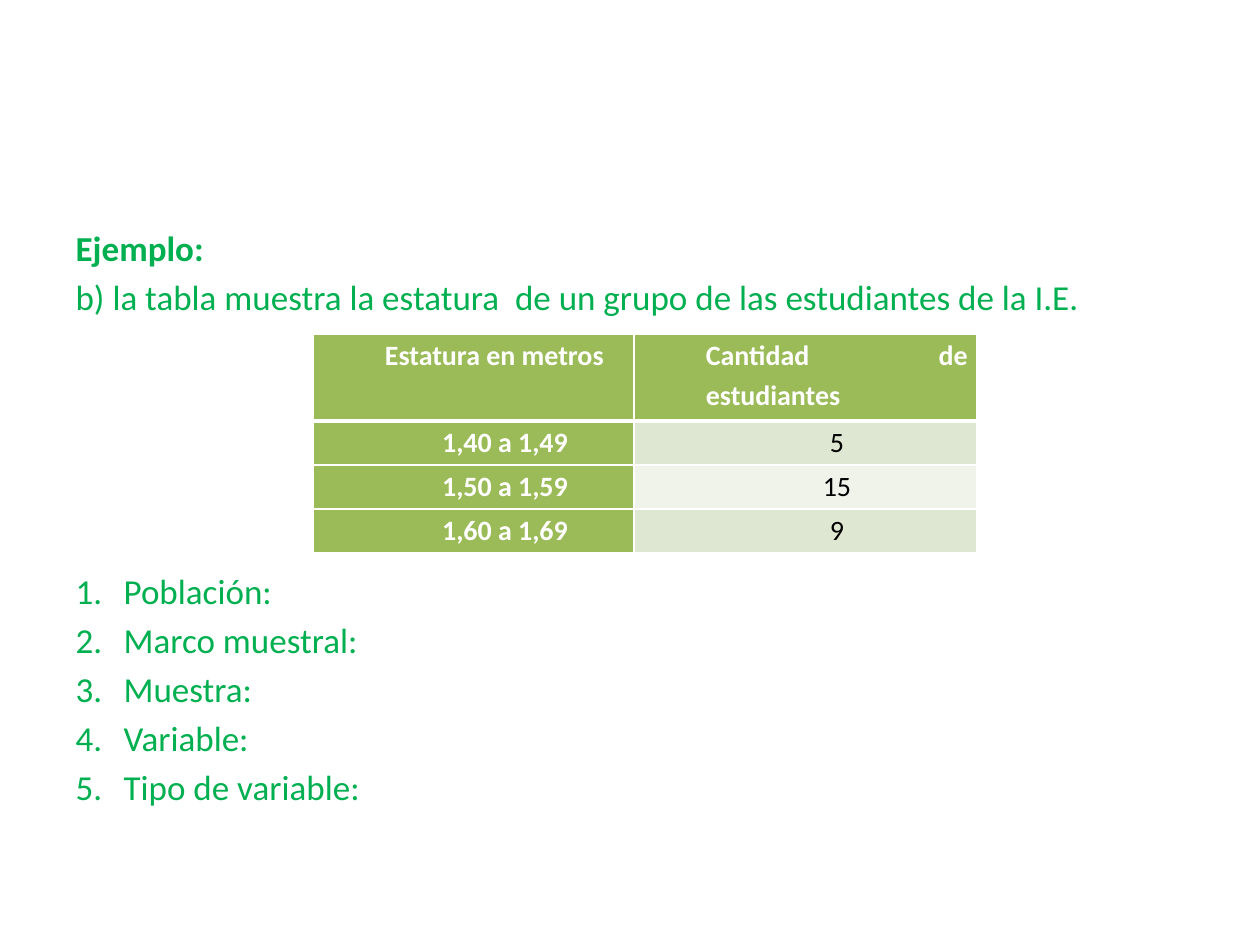
from lxml import etree
from pptx import Presentation
from pptx import util as u
from pptx.dml.color import RGBColor
from pptx.enum import text
from pptx.oxml.ns import qn

# Content
INTRO = [
    "Ejemplo:",
    "b) la tabla muestra la estatura  de un grupo de las estudiantes de la I.E.",
]
ITEMS = ["Población:", "Marco muestral:", "Muestra:", "Variable:", "Tipo de variable:"]
ROWS = [
    ("Estatura en metros", "Cantidad de estudiantes"),
    ("1,40 a 1,49", "5"),
    ("1,50 a 1,59", "15"),
    ("1,60 a 1,69", "9"),
]

# Theme and layout
THEME = dict(font="Calibri", body="00B050", head="9BBB59", odd="DEE7D1",
             even="EFF3EA", light="FFFFFF", dark="000000", big=20, small=16)
BODY = (63, 220, 1134, 624)
ORIGIN = (313, 334)
COLS = (321, 343)
HEIGHTS = (87, 44, 44, 44)
HANG, INDENT, INSET = 48, 63, 9
GAP, TABLE_GAP = 4, 144  # points before a paragraph


def px(n):
    return u.Emu(round(n * 914400 / 126))


def style(par, size, color, bold=False):
    for run in par.runs:
        font = run.font
        font.name, font.size, font.bold = THEME["font"], u.Pt(size), bold
        font.color.rgb = RGBColor.from_string(color)


def indent(par, left, first=0):
    props = par._p.get_or_add_pPr()
    props.set("marL", str(px(left)))
    props.set("indent", str(px(first)))
    return props


def border(cell, side, width):
    line = etree.Element(qn("a:" + side), w=str(u.Pt(width)))
    fill = etree.SubElement(line, qn("a:solidFill"))
    etree.SubElement(fill, qn("a:srgbClr"), val=THEME["light"])
    return line


def add_body(slide):
    box = slide.placeholders[1]
    box.left, box.top, box.width, box.height = map(px, BODY)
    frame = box.text_frame
    frame.text = "\n".join(INTRO + ITEMS)
    for i, par in enumerate(frame.paragraphs):
        first = i == len(INTRO)
        par.space_before = u.Pt(TABLE_GAP if first else GAP)
        style(par, THEME["big"], THEME["body"], bold=i == 0)
        if i < len(INTRO):
            etree.SubElement(indent(par, 0), qn("a:buNone"))
        else:
            props = indent(par, HANG, -HANG)
            etree.SubElement(props, qn("a:buFont"), typeface="+mj-lt")
            etree.SubElement(props, qn("a:buAutoNum"), type="arabicPeriod")


def fill_cell(cell, words, r, c):
    label = r == 0 or c == 0
    shade = "head" if label else "odd" if r % 2 else "even"
    cell.text = words
    cell.margin_left = cell.margin_right = px(INSET)
    cell.margin_top = cell.margin_bottom = 0
    par = cell.text_frame.paragraphs[0]
    par.alignment = text.PP_ALIGN.CENTER if r else text.PP_ALIGN.JUSTIFY
    par.line_spacing = 1.15
    indent(par, INDENT)
    style(par, THEME["small"], THEME["light" if label else "dark"], label)
    # Borders come before the fill in the cell properties
    props = cell._tc.get_or_add_tcPr()
    widths = dict(lnL=1, lnR=1, lnT=3 if r == 1 else 1, lnB=3 if r == 0 else 1)
    for side, width in widths.items():
        props.append(border(cell, side, width))
    cell.fill.solid()
    cell.fill.fore_color.rgb = RGBColor.from_string(THEME[shade])


def add_grid(slide):
    size = (sum(COLS), sum(HEIGHTS))
    grid = slide.shapes.add_table(len(ROWS), len(COLS), *map(px, ORIGIN + size)).table
    for col, width in zip(grid.columns, COLS):
        col.width = px(width)
    for r, (row, height) in enumerate(zip(ROWS, HEIGHTS)):
        grid.rows[r].height = px(height)
        for c, words in enumerate(row):
            fill_cell(grid.cell(r, c), words, r, c)


def main():
    deck = Presentation()
    deck.slide_width, deck.slide_height = u.Inches(10), u.Inches(7.5)
    slide = deck.slides.add_slide(deck.slide_layouts[1])
    title = slide.shapes.title._element
    title.getparent().remove(title)  # the slide has no title
    add_body(slide)
    add_grid(slide)
    deck.save("out.pptx")


if __name__ == "__main__":
    main()
